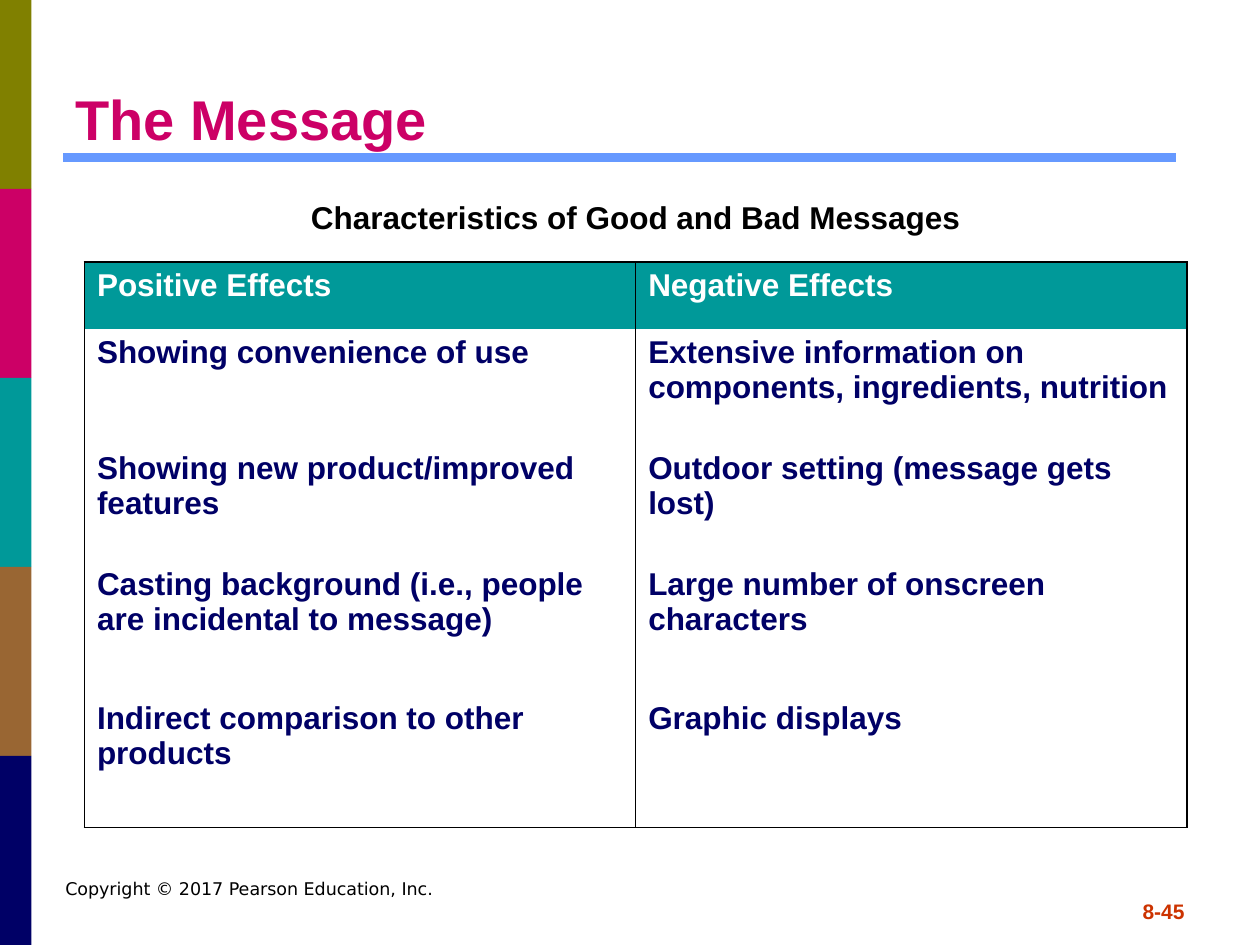
from dataclasses import dataclass

from lxml.etree import SubElement
from pptx import Presentation
from pptx.dml.color import RGBColor
from pptx.enum.shapes import MSO_CONNECTOR as CONN, MSO_SHAPE as SHAPE
from pptx.enum.text import MSO_ANCHOR as ANCHOR, PP_ALIGN as ALIGN
from pptx.oxml import parse_xml
from pptx.oxml.ns import nsdecls, qn
from pptx.util import Inches, Pt

BLACK, WHITE, NAVY, TEAL, MAGENTA = "000000", "FFFFFF", "000066", "009999", "CC0066"
BAND_COLORS = ("808000", MAGENTA, TEAL, "996633", NAVY)
BAND_W, BAND_H = 0.25, 1.5
ROW_HEIGHTS = (0.53, 0.92, 0.92, 1.06, 1.06)
EFFECTS = (
    ("Positive Effects", "Negative Effects"),
    ("Showing convenience of use",
     "Extensive information on components, ingredients, nutrition"),
    ("Showing new product/improved features", "Outdoor setting (message gets lost)"),
    ("Casting background (i.e., people are incidental to message)",
     "Large number of onscreen characters"),
    ("Indirect comparison to other products", "Graphic displays"),
)


@dataclass
class Label:
    text: str
    box: tuple[float, float, float, float]
    size: float
    color: str
    font: str = "Arial"
    bold: bool = True
    align: ALIGN = ALIGN.LEFT
    anchor: ANCHOR = ANCHOR.TOP
    inset: float = 0.05


LABELS = (
    Label("8-45", (7.17, 7.08, 2.33, 0.25), 12, "CC3300", align=ALIGN.RIGHT),
    Label("Copyright © 2017 Pearson Education, Inc.", (0.42, 6.92, 6.33, 0.58),
          10, BLACK, font="DejaVu Sans", bold=False),
    Label("The Message", (0.5, 0.3, 9, 0.95), 32, MAGENTA, anchor=ANCHOR.BOTTOM),
    Label("Characteristics of Good and Bad Messages", (0.67, 1.42, 8.75, 0.81),
          18, BLACK, align=ALIGN.CENTER, inset=0.15),
)


def rgb(color: str) -> RGBColor:
    return RGBColor.from_string(color)


def write(tf, text: str, size: float, color: str, font: str = "Arial",
          bold: bool = True, align: ALIGN = ALIGN.LEFT) -> None:
    p = tf.paragraphs[0]
    p.alignment = align
    r = p.add_run()
    r.text = text
    for name, value in {"name": font, "size": Pt(size), "bold": bold}.items():
        setattr(r.font, name, value)
    r.font.color.rgb = rgb(color)


def add_label(s, label: Label) -> None:
    tf = s.shapes.add_textbox(*map(Inches, label.box)).text_frame
    options = {"word_wrap": True, "vertical_anchor": label.anchor,
               "margin_top": Inches(label.inset), "margin_bottom": Inches(label.inset)}
    for name, value in options.items():
        setattr(tf, name, value)
    write(tf, label.text, label.size, label.color, label.font, label.bold, label.align)


def add_band(s, index: int, color: str) -> None:
    sp = s.shapes.add_shape(SHAPE.RECTANGLE, 0, Inches(index * BAND_H),
                            Inches(BAND_W), Inches(BAND_H))
    sp.shadow.inherit = False
    sp.fill.solid()
    sp.fill.fore_color.rgb = rgb(color)
    sp.line.fill.background()


def add_rule(s) -> None:
    line = s.shapes.add_connector(CONN.STRAIGHT, Inches(0.5), Inches(1.25),
                                  Inches(9.33), Inches(1.25))
    line.line.color.rgb = rgb("6699FF")
    line.line.width = Pt(5)
    SubElement(line._element.spPr, qn("a:effectLst"))


def set_borders(cell, visible: str) -> None:
    tc_pr = cell._tc.get_or_add_tcPr()
    for index, side in enumerate("LRTB"):
        paint = (f'<a:solidFill><a:srgbClr val="{BLACK}"/></a:solidFill>'
                 if side in visible else "<a:noFill/>")
        xml = f'<a:ln{side} {nsdecls("a")} w="{Pt(1)}">{paint}</a:ln{side}>'
        tc_pr.insert(index, parse_xml(xml))


def add_effects_table(s) -> None:
    frame = s.shapes.add_table(len(EFFECTS), 2, Inches(0.67), Inches(2.08),
                               Inches(8.75), Inches(sum(ROW_HEIGHTS)))
    table = frame.table
    table.first_row = table.horz_banding = False
    last = len(EFFECTS) - 1
    for i, (height, texts) in enumerate(zip(ROW_HEIGHTS, EFFECTS)):
        table.rows[i].height = Inches(height)
        sides = "LR" + "T" * (i == 0) + "B" * (i == last)
        for j, text in enumerate(texts):
            cell = table.cell(i, j)
            if i == 0:
                cell.fill.solid()
                cell.fill.fore_color.rgb = rgb(TEAL)
            else:
                cell.fill.background()
            set_borders(cell, sides)
            write(cell.text_frame, text, 18, NAVY if i else WHITE)


def main() -> None:
    """Build the slide on good and bad message characteristics."""
    prs = Presentation()
    prs.slide_width, prs.slide_height = Inches(10), Inches(7.5)
    s = prs.slides.add_slide(prs.slide_layouts[6])
    add_rule(s)
    for index, color in enumerate(BAND_COLORS):
        add_band(s, index, color)
    add_effects_table(s)
    for label in LABELS:
        add_label(s, label)
    prs.save("out.pptx")


if __name__ == "__main__":
    main()
